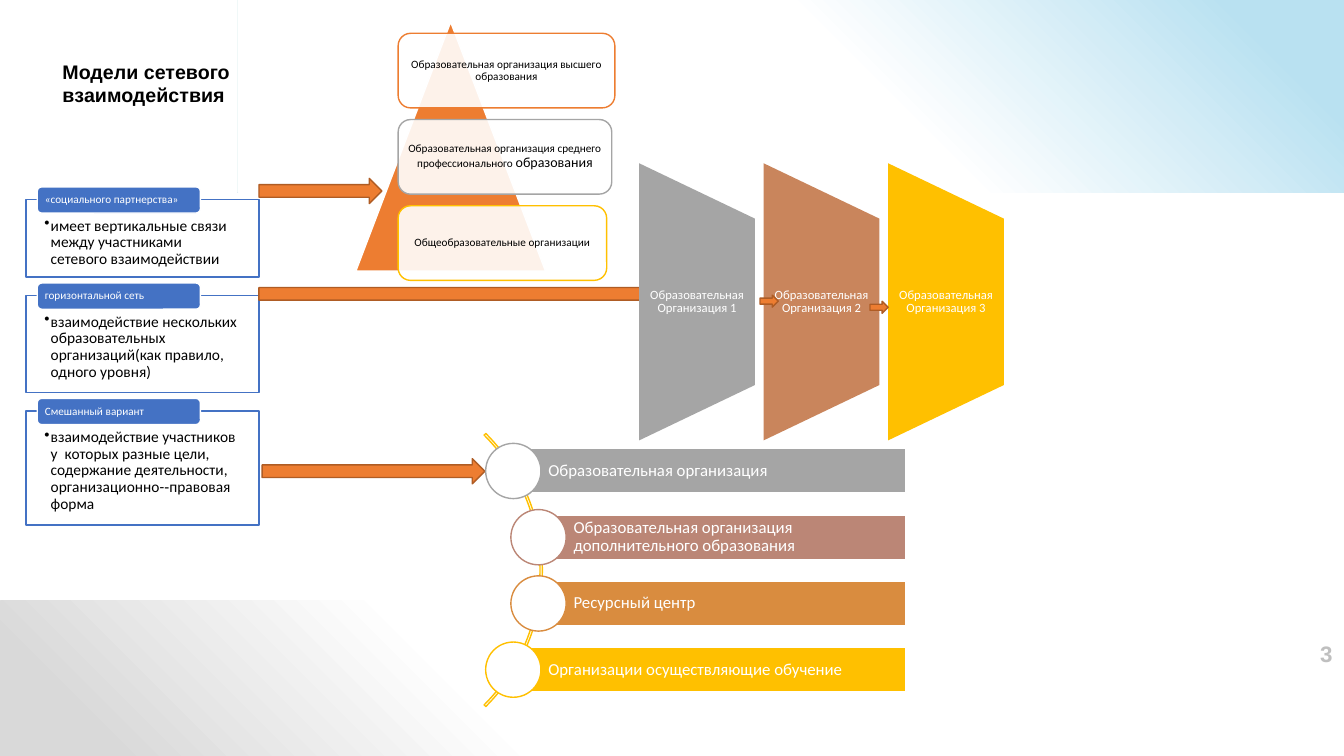
from lxml import etree
from pptx import Presentation
from pptx.dml.color import RGBColor
from pptx.enum.shapes import MSO_SHAPE
from pptx.enum.text import MSO_ANCHOR, MSO_AUTO_SIZE, PP_ALIGN
from pptx.oxml.ns import qn
from pptx.util import Pt

RECT, ROUND = MSO_SHAPE.RECTANGLE, MSO_SHAPE.ROUNDED_RECTANGLE
OVAL, ARC = MSO_SHAPE.OVAL, MSO_SHAPE.BLOCK_ARC
TRIANGLE, ARROW = MSO_SHAPE.ISOSCELES_TRIANGLE, MSO_SHAPE.RIGHT_ARROW
TRAPEZOID = MSO_SHAPE.FLOWCHART_MANUAL_OPERATION
LEFT, CENTER, RIGHT = PP_ALIGN.LEFT, PP_ALIGN.CENTER, PP_ALIGN.RIGHT
TOP, MIDDLE = MSO_ANCHOR.TOP, MSO_ANCHOR.MIDDLE
FIT = MSO_AUTO_SIZE.SHAPE_TO_FIT_TEXT

COLORS = {
    "white": "FFFFFF", "black": "000000", "blue": "4472C4", "orange": "ED7D31",
    "rust": "AF5C24", "gray": "A5A5A5", "gold": "FFC000", "copper": "C9855C",
    "rose": "BB8676", "amber": "D98C3F", "sky": "B9E1F1", "mist": "D9D9D9",
    "number": "BFBFBF",
}


def rgb(name):
    return RGBColor.from_string(COLORS[name])


class Deck:
    """Holds the text style and the current slide and draws elements on it."""

    def __init__(self, slide, font="Calibri", spacing=0.9):
        self.slide, self.font, self.spacing = slide, font, spacing

    def shape(self, kind, x, y, w, h, fill=None, line=None, alpha=None):
        sp = self.slide.shapes.add_shape(kind, Pt(x), Pt(y), Pt(w), Pt(h))
        sp.shadow.inherit = False
        if fill:
            sp.fill.solid()
            sp.fill.fore_color.rgb = rgb(fill)
        else:
            sp.fill.background()
        if alpha:
            clr = sp._element.spPr.find(".//" + qn("a:srgbClr"))
            etree.SubElement(clr, qn("a:alpha"), val=str(alpha * 1000))
        if line:
            sp.line.color.rgb = rgb(line)
            sp.line.width = Pt(1)
        else:
            sp.line.fill.background()
        return sp

    def backdrop(self, x, y, w, h, color, rotation=0):
        sp = self.shape(RECT, x, y, w, h)
        sp.rotation = rotation
        sp.fill.gradient()
        sp.fill.gradient_angle = 225
        for stop, name, pos in zip(sp.fill.gradient_stops, (color, "white"), (0.09, 0.43)):
            stop.color.rgb = rgb(name)
            stop.position = pos

    def style(self, r, size, color, bold=False, font=None):
        r.font.size, r.font.bold = Pt(size), bold
        r.font.name = font or self.font
        r.font.color.rgb = rgb(color)

    def text(self, sp, text, size, color="white", align=LEFT, anchor=MIDDLE,
             inset=(2.4, 2.4, 2.4, 2.4), bullet=False, spacing=None, bold=False, font=None):
        tf = sp.text_frame
        tf.text = text
        tf.word_wrap, tf.vertical_anchor = True, anchor
        tf.margin_left, tf.margin_top, tf.margin_right, tf.margin_bottom = map(Pt, inset)
        p = tf.paragraphs[0]
        if bullet:
            pPr = p._p.get_or_add_pPr()
            pPr.set("marL", str(Pt(4.5)))
            pPr.set("indent", str(Pt(-4.5)))
            etree.SubElement(pPr, qn("a:buChar"), char="•")
        p.alignment, p.line_spacing = align, spacing or self.spacing
        self.style(p.runs[0], size, color, bold, font)
        return p

    def box(self, x, y, w, h, *args, **kwargs):
        sp = self.slide.shapes.add_textbox(Pt(x), Pt(y), Pt(w), Pt(h))
        return self.text(sp, *args, **kwargs)

    def title(self, x, y, w, h, text):
        sp = self.slide.shapes.title
        sp.left, sp.top, sp.width, sp.height = map(Pt, (x, y, w, h))
        self.text(sp, text, 14, "black", anchor=TOP, inset=(7.2, 3.6, 7.2, 3.6),
                  spacing=1.0, bold=True, font="Arial")
        sp.text_frame.auto_size = FIT
        self.slide.shapes._spTree.append(sp._element)

    def arrow(self, x, y, w, h=18):
        self.shape(ARROW, x, y, w, h, "orange", "rust")

    def panel(self, y, h, label, text):
        sp = self.shape(RECT, 18.7, y, 166.3, h, "white", "blue", 90)
        self.text(sp, text, 11, "black", anchor=TOP, inset=(13, 13, 13, 6.5), bullet=True)
        tag = self.shape(ROUND, 26.6, y - 9, 116.6, 18.7, "blue", "white")
        self.text(tag, label, 8, inset=(4.5, 0, 4.5, 0))

    def level(self, y, w, line, text):
        sp = self.shape(ROUND, 284.4, y, w, 53.3, "white", line, 90)
        return self.text(sp, text, 8, "black", CENTER)

    def stage(self, x, fill, text):
        mid, w, h = 215.6, 198, 82.8
        sp = self.shape(TRAPEZOID, x + (h - w) / 2, mid - h / 2, w, h, fill)
        sp.rotation = 270
        self.box(x, mid - 59.4, h, 118.8, text, 9, align=CENTER, inset=(4.3, 0, 4.3, 0))

    def member(self, x, y, color, text):
        sp = self.shape(RECT, x, y, 647.3 - x, 31.7, color, "white")
        self.text(sp, text, 12, inset=(25.2, 2.4, 2.4, 2.4))
        self.shape(OVAL, x - 19.6, y - 3.9, 39.5, 39.5, "white", color)


PANELS = [
    (55.4, "«социального партнерства»",
     "имеет вертикальные связи между участниками сетевого взаимодействии"),
    (69.1, "горизонтальной сеть",
     "взаимодействие нескольких образовательных организаций(как правило, одного уровня)"),
    (81.4, "Смешанный вариант",
     "взаимодействие участников у  которых разные цели, содержание деятельности, "
     "организационно-‐правовая форма"),
]
LEVELS = [
    (154.8, "orange", "Образовательная организация высшего образования"),
    (152.6, "gray", "Образовательная организация среднего профессионального "),
    (149, "gold", "Общеобразовательные организации"),
]
MEMBERS = [
    (366.5, "gray", "Образовательная организация"),
    (384.5, "rose", "Образовательная организация дополнительного образования"),
    (384.5, "amber", "Ресурсный центр"),
    (366.5, "gold", "Организации осуществляющие обучение"),
]


def main():
    prs = Presentation()
    prs.slide_width, prs.slide_height = Pt(960), Pt(540)
    deck = Deck(prs.slides.add_slide(prs.slide_layouts[5]))

    deck.backdrop(170, 0, 790, 137.5, "sky")
    deck.backdrop(0, 429, 790, 111, "mist", 180)
    deck.box(901.4, 452.2, 57.6, 29.5, "3", 16, "number", RIGHT,
             inset=(7.2, 3.6, 7.2, 3.6), spacing=1.0, bold=True, font="Arial")
    deck.title(37.4, 38.9, 152, 41, "Модели сетевого взаимодействия")

    y = 142.5
    for h, label, text in PANELS:
        deck.panel(y, h, label, text)
        y += h + 13.3

    deck.shape(TRIANGLE, 254.2, 15.8, 135.4, 177.8, "orange", "white")
    levels = [deck.level(23.8 + 61.6 * i, *row) for i, row in enumerate(LEVELS)]
    r = levels[1].add_run()
    r.text = "образования"
    deck.style(r, 10, "black")

    deck.arrow(185, 127.4, 87.8)
    deck.arrow(185, 200.9, 283.7)
    for i, fill in enumerate(("gray", "copper", "gold")):
        deck.stage(456.5 + 88.9 * i, fill, f"Образовательная Организация {i + 1}")
    deck.arrow(542.9, 210.8, 13, 8.6)
    deck.arrow(621.4, 215.2, 13, 8.6)
    deck.arrow(187.2, 327.6, 159.1)

    arc = deck.shape(ARC, 111.6, 269.3, 275.8, 275.8, line="gold")
    for i, value in enumerate((189, 27, 0.006)):
        arc.adjustments[i] = value
    for i, (x, color, text) in enumerate(MEMBERS):
        deck.member(x, 320.6 + 47.3 * i, color, text)

    prs.save("out.pptx")


if __name__ == "__main__":
    main()
